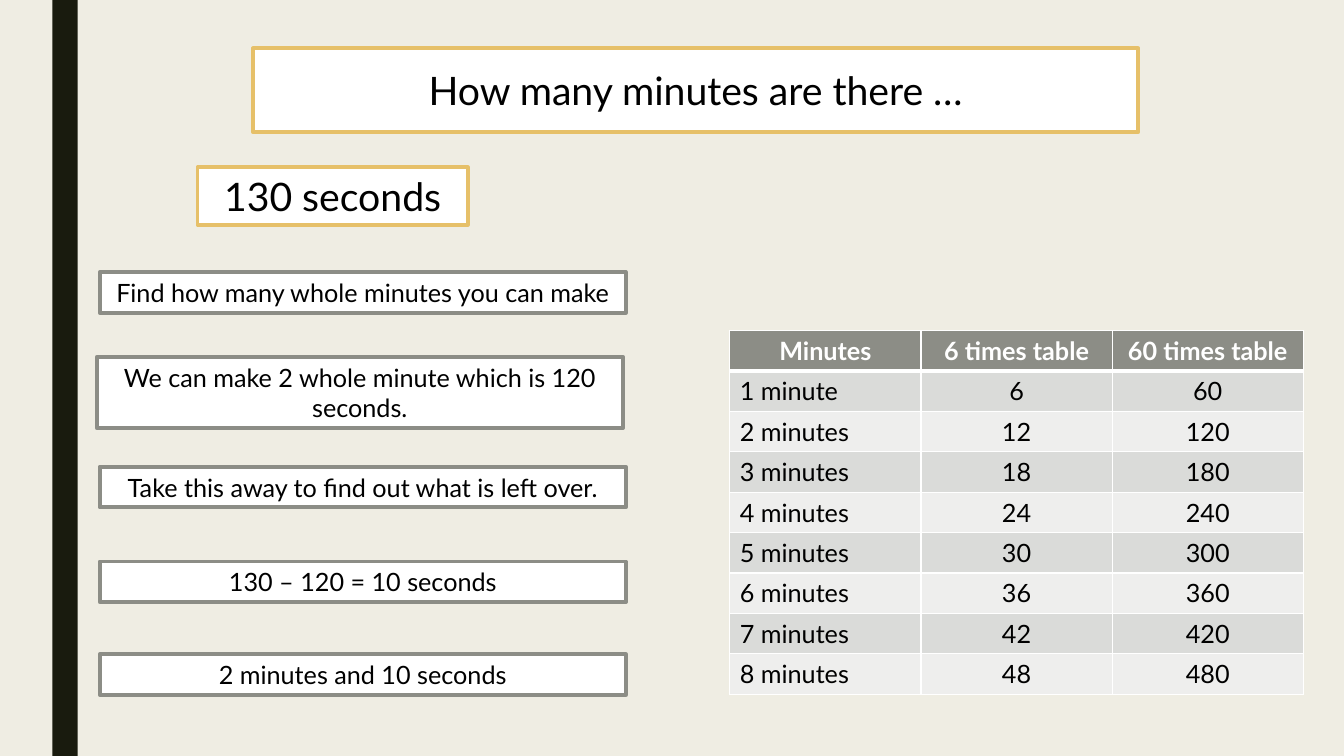
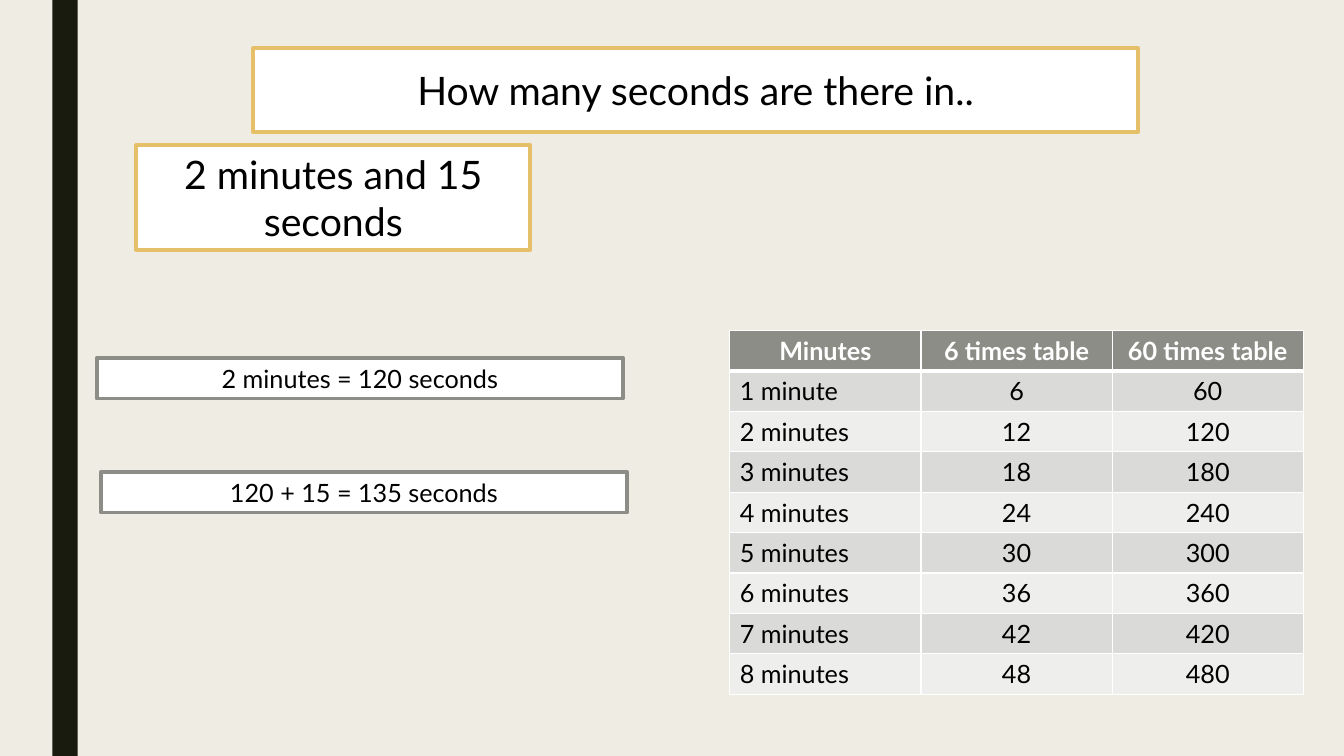
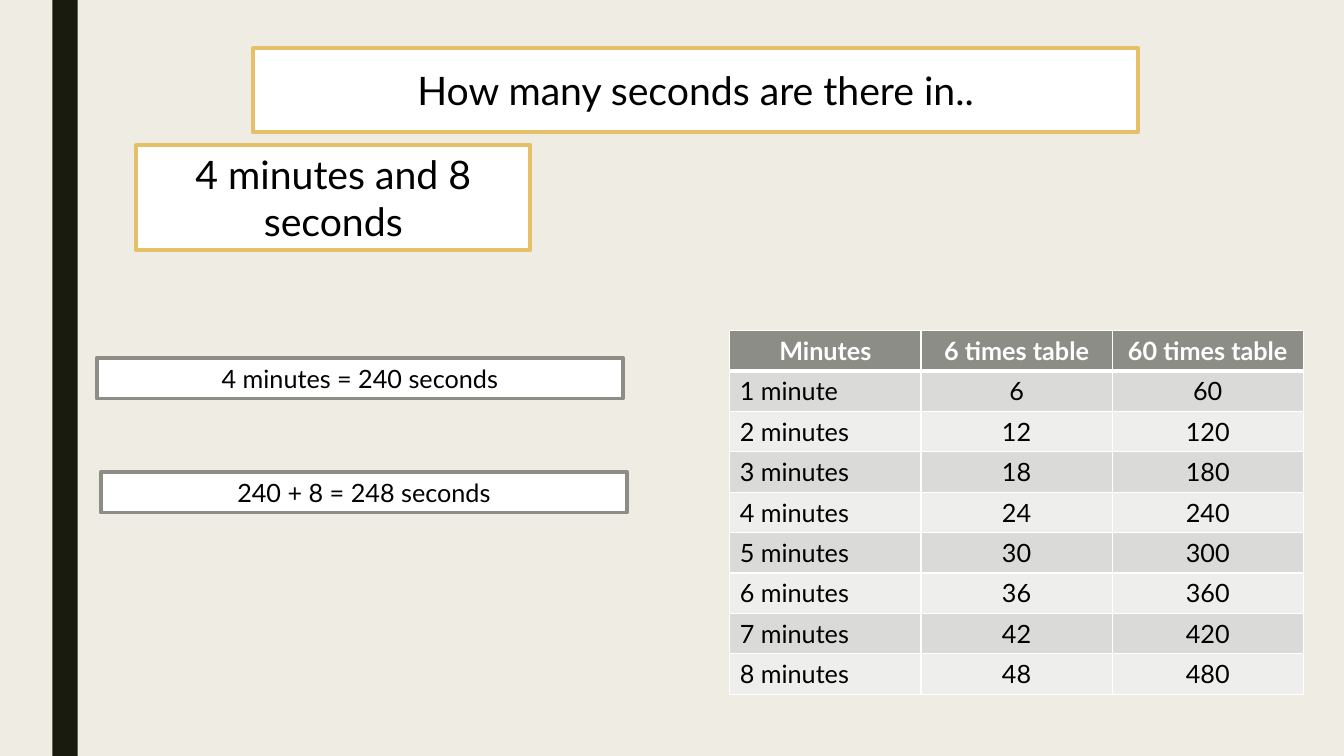
import pptx
import pptx.dml.color
import pptx.enum.shapes
import pptx.enum.text
import pptx.oxml
import pptx.oxml.ns
import pptx.util

RGB = pptx.dml.color.RGBColor
Pt = pptx.util.Pt
RECT = pptx.enum.shapes.MSO_SHAPE.RECTANGLE
ALIGN = pptx.enum.text.PP_ALIGN
ANCHOR = pptx.enum.text.MSO_ANCHOR
AUTOSIZE = pptx.enum.text.MSO_AUTO_SIZE

CREAM = RGB(0xEF, 0xED, 0xE3)
DARK = RGB(0x19, 0x1B, 0x0E)
GOLD = RGB(0xE6, 0xC0, 0x69)
GREY = RGB(0x8C, 0x8D, 0x86)
ROW_FILLS = (RGB(0xDA, 0xDB, 0xD9), RGB(0xEE, 0xEE, 0xED))
WHITE = RGB(0xFF, 0xFF, 0xFF)
BLACK = RGB(0, 0, 0)

# Font formats
HEADING = {"name": "Lato", "size": Pt(28), "bold": False}
BODY = {"name": "Lato", "size": Pt(18), "bold": False}
TABLE_HEAD = {**BODY, "bold": True}

# Boxes in percent of the slide: left, top, width, height
BAND = (3.9, 0, 1.88, 100)
TITLE = (18.83, 8.13, 65.85, 7.63)
SHORT_QUESTION = (14.7, 22.13, 20.1, 7.63)
LONG_QUESTION = (10.13, 19.2, 29.33, 13.87)
STEPS = (7.2, 36, 39.15, 56)
TABLE = (54.3, 43.73, 42.68, 48.13)
STEP_HEIGHT, TALL_STEP_HEIGHT = 5.39, 9.43

# Each step: shift right and down inside the steps box, height, text
SLIDES = [
    ("How many minutes are there …", SHORT_QUESTION, "130 seconds", [
        (0.22, 0, STEP_HEIGHT, "Find how many whole minutes you can make"),
        (0, 11.2, TALL_STEP_HEIGHT, "We can make 2 whole minute which is 120 seconds."),
        (0.22, 25.73, STEP_HEIGHT, "Take this away to find out what is left over."),
        (0.22, 38.27, STEP_HEIGHT, "130 – 120 = 10 seconds"),
        (0.22, 50.53, STEP_HEIGHT, "2 minutes and 10 seconds")]),
    ("How many seconds are there in..", LONG_QUESTION, "2 minutes and 15 seconds", [
        (0, 11.33, STEP_HEIGHT, "2 minutes = 120 seconds"),
        (0.3, 26.4, STEP_HEIGHT, "120 + 15 = 135 seconds")]),
    ("How many seconds are there in..", LONG_QUESTION, "4 minutes and 8 seconds", [
        (0, 11.33, STEP_HEIGHT, "4 minutes = 240 seconds"),
        (0.3, 26.4, STEP_HEIGHT, "240 + 8 = 248 seconds")]),
]

prs = pptx.Presentation()
prs.slide_width = pptx.util.Inches(13.33)
prs.slide_height = pptx.util.Inches(7.5)


def to_emu(box):
    sides = (prs.slide_width, prs.slide_height) * 2
    return [round(share * side / 100) for share, side in zip(box, sides)]


def write(tf, text, font, color, align=ALIGN.CENTER):
    p = tf.paragraphs[0]
    p.alignment = align
    r = p.add_run()
    r.text = text
    r.font.color.rgb = color
    for name, value in font.items():
        setattr(r.font, name, value)


def style_box(sp, box, text, font, line_color):
    """White framed box with centred text."""
    sp.left, sp.top, sp.width, sp.height = to_emu(box)
    sp.shadow.inherit = False
    sp.fill.solid()
    sp.fill.fore_color.rgb = WHITE
    sp.line.color.rgb = line_color
    sp.line.width = Pt(2.75)
    tf = sp.text_frame
    tf.word_wrap = True
    tf.auto_size = AUTOSIZE.SHAPE_TO_FIT_TEXT
    tf.vertical_anchor = ANCHOR.MIDDLE
    write(tf, text, font, BLACK)


def add_box(s, box, text, font, line_color):
    sp = s.shapes.add_shape(RECT, *to_emu(box))
    style_box(sp, box, text, font, line_color)


def add_steps(s, box, steps):
    left, top, width, _ = box
    for dx, dy, height, text in steps:
        add_box(s, (left + dx, top + dy, width, height), text, BODY, GREY)


def set_borders(cell, widths):
    """White borders; widths in points by side."""
    tc_pr = cell._tc.get_or_add_tcPr()
    for i, side in enumerate("LRTB"):
        tc_pr.insert(i, pptx.oxml.parse_xml(
            f'<a:ln{side} {pptx.oxml.ns.nsdecls("a")} w="{Pt(widths[side])}">'
            f'<a:solidFill><a:srgbClr val="{WHITE}"/></a:solidFill></a:ln{side}>'))


def add_times_table(s, box):
    rows = [("Minutes", "6 times table", "60 times table")]
    rows += [(f"{n} minute" + "s" * (n > 1), str(6 * n), str(60 * n))
             for n in range(1, 9)]
    left, top, width, height = to_emu(box)
    table = s.shapes.add_table(len(rows), 3, left, top, width, height).table
    table.first_row = table.horz_banding = False
    for col in table.columns:
        col.width = width // 3
    for i, values in enumerate(rows):
        table.rows[i].height = height // len(rows)
        head = i == 0
        for j, value in enumerate(values):
            cell = table.cell(i, j)
            cell.fill.solid()
            cell.fill.fore_color.rgb = GREY if head else ROW_FILLS[(i - 1) % 2]
            set_borders(cell, {"L": 1, "R": 1, "T": 3 if i == 1 else 1,
                               "B": 3 if head else 1})
            write(cell.text_frame, value, TABLE_HEAD if head else BODY,
                  WHITE if head else BLACK,
                  ALIGN.CENTER if head or j else ALIGN.LEFT)


def set_up_master(s):
    """Background and side band, shared by all slides."""
    master = prs.slide_master
    master.background.fill.solid()
    master.background.fill.fore_color.rgb = CREAM
    band = s.shapes.add_shape(RECT, *to_emu(BAND))
    band.shadow.inherit = False
    band.fill.solid()
    band.fill.fore_color.rgb = DARK
    band.line.fill.background()
    # Move the band behind the master's placeholders, with an unused id
    band.element.nvSpPr.cNvPr.set("id", "20")
    master.shapes.element.insert(2, band.element)


def add_slide(title, question_box, question, steps):
    s = prs.slides.add_slide(prs.slide_layouts[5])
    style_box(s.shapes.title, TITLE, title, HEADING, GOLD)
    add_box(s, question_box, question, HEADING, GOLD)
    add_times_table(s, TABLE)
    add_steps(s, STEPS, steps)


def main():
    for content in SLIDES:
        add_slide(*content)
    set_up_master(prs.slides[0])
    prs.save("out.pptx")


if __name__ == "__main__":
    main()
